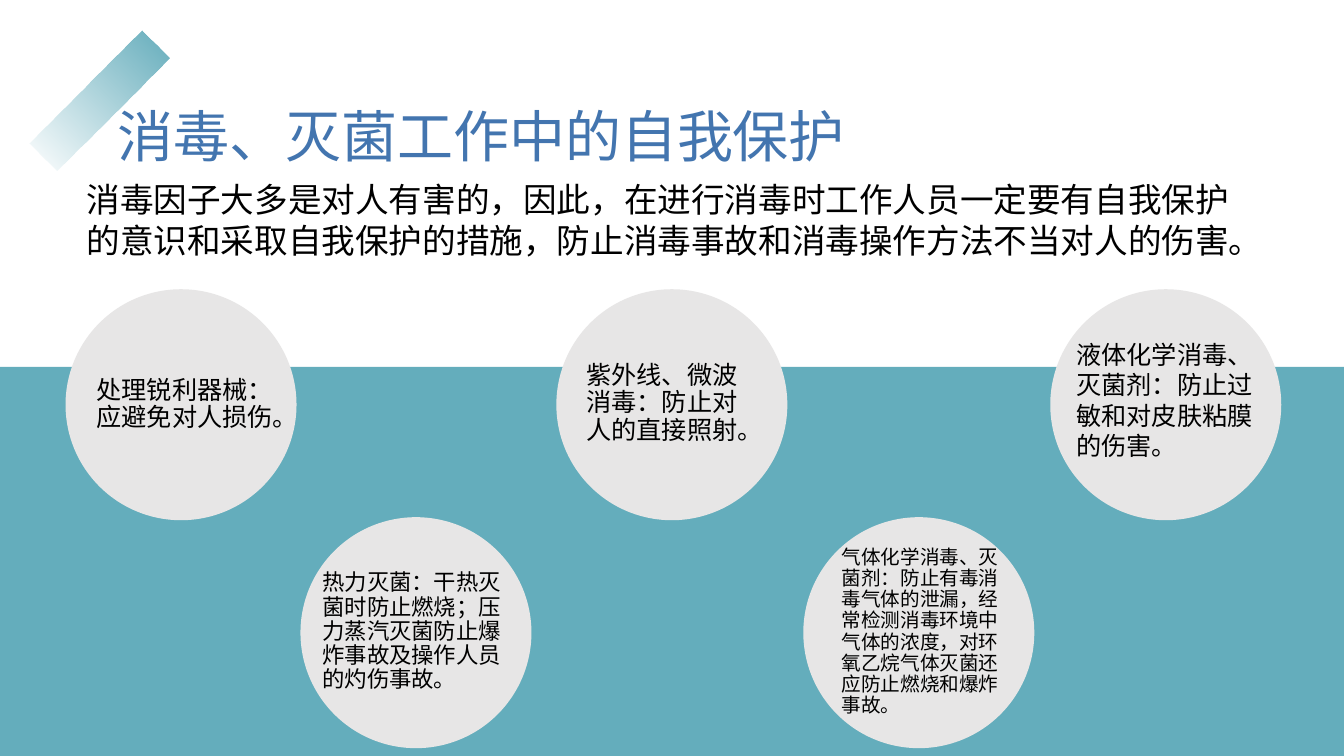
import pptx
import pptx.dml.color
import pptx.enum.shapes
import pptx.enum.text
import pptx.oxml
import pptx.oxml.ns
import pptx.util
from lxml import etree

Pt = pptx.util.Pt
RGB = pptx.dml.color.RGBColor
SHAPE = pptx.enum.shapes.MSO_SHAPE
ANCHOR = pptx.enum.text.MSO_ANCHOR
qn = pptx.oxml.ns.qn

TEAL = RGB(0x64, 0xAD, 0xBC)
GREY = RGB(0xE7, 0xE6, 0xE6)
BLUE = RGB(0x43, 0x75, 0xAF)
BLACK = RGB(0, 0, 0)
FONT = "Noto Sans CJK SC"

WIDTH, HEIGHT = 960, 540
DIAMETER = 165
UPPER, LOWER = 206.6, 369.4

# Circle left and top; text box offset, width and height; size, line spacing, space before; text
MEASURES = [
    (46.8, UPPER, (15.1, 59.8, 147.6, 46.8), 18, 0.9, 10,
     "处理锐利器械：应避免对人损伤。"),
    (214.6, LOWER, (8.6, 35.3, 147.6, 94.3), 16, 0.9, 10,
     "热力灭菌：干热灭菌时防止燃烧；压力蒸汽灭菌防止爆炸事故及操作人员的灼伤事故。"),
    (397.4, UPPER, (14.4, 49, 136.8, 66.2), 18, 0.9, 10,
     "紫外线、微波消毒：防止对人的直接照射。"),
    (573.8, LOWER, (20.2, 18, 127.4, 129.6), 14, 0.9, 10,
     "气体化学消毒、灭菌剂：防止有毒消毒气体的泄漏，经常检测消毒环境中气体的浓度，"
     "对环氧乙烷气体灭菌还应防止燃烧和爆炸事故。"),
    (750.2, UPPER, (11.5, 32.4, 153.4, 94.3), 18, 1, 0,
     "液体化学消毒、灭菌剂：防止过敏和对皮肤粘膜的伤害。"),
]


def add_shape(s, kind, x, y, w, h, color):
    sp = s.shapes.add_shape(kind, Pt(x), Pt(y), Pt(w), Pt(h))
    sp.shadow.inherit = False
    sp.line.fill.background()
    sp.fill.solid()
    sp.fill.fore_color.rgb = color
    return sp


def add_text(s, x, y, w, h, text, size, color=BLACK, spacing=1, before=0,
             anchor=ANCHOR.TOP):
    tf = s.shapes.add_textbox(Pt(x), Pt(y), Pt(w), Pt(h)).text_frame
    tf.word_wrap = True
    tf.vertical_anchor = anchor
    p = tf.paragraphs[0]
    p.line_spacing = spacing
    p.space_before = Pt(before)
    r = p.add_run()
    r.text = text
    r.font.size = Pt(size)
    r.font.color.rgb = color
    r.font.name = FONT
    # East Asian typeface
    etree.SubElement(r.font._element, qn("a:ea")).set("typeface", FONT)


def add_header(s, x, y):
    add_text(s, x, y, 828, 104.4, "消毒、灭菌工作中的自我保护", 40, BLUE, 0.9,
             anchor=ANCHOR.MIDDLE)
    add_text(s, x - 22.3, y + 77, 850.3, 65.5,
             "消毒因子大多是对人有害的，因此，在进行消毒时工作人员一定要有自我保护"
             "的意识和采取自我保护的措施，防止消毒事故和消毒操作方法不当对人的伤害。", 24)


def add_measure(s, x, y, box, size, spacing, before, text):
    add_shape(s, SHAPE.OVAL, x, y, DIAMETER, DIAMETER, GREY)
    dx, dy, w, h = box
    add_text(s, x + dx, y + dy, w, h, text, size, spacing=spacing, before=before)


def add_ribbon(s, x, y, w, h):
    sp = add_shape(s, SHAPE.RECTANGLE, x, y, w, h, TEAL)
    sp.rotation = 315
    sp.fill.gradient()
    sp.fill.gradient_angle = 0
    for stop in sp.fill.gradient_stops:
        stop.color.rgb = TEAL
    # The lower end fades out
    for clr in sp._element.spPr.findall(".//" + qn("a:gs") + "[@pos='0']/" + qn("a:srgbClr")):
        etree.SubElement(clr, qn("a:alpha")).set("val", "0")


def main():
    prs = pptx.Presentation()
    prs.slide_width, prs.slide_height = Pt(WIDTH), Pt(HEIGHT)
    s = prs.slides.add_slide(prs.slide_layouts[6])
    # Lower colour band
    add_shape(s, SHAPE.RECTANGLE, 0, 262, WIDTH, HEIGHT - 262, TEAL)
    # Title and introduction
    add_header(s, 77, 47.5)
    # Protective measures
    for measure in MEASURES:
        add_measure(s, *measure)
    # Corner ribbon
    add_ribbon(s, 14.4, 57.6, 113, 28)
    prs.save("out.pptx")


if __name__ == "__main__":
    main()
